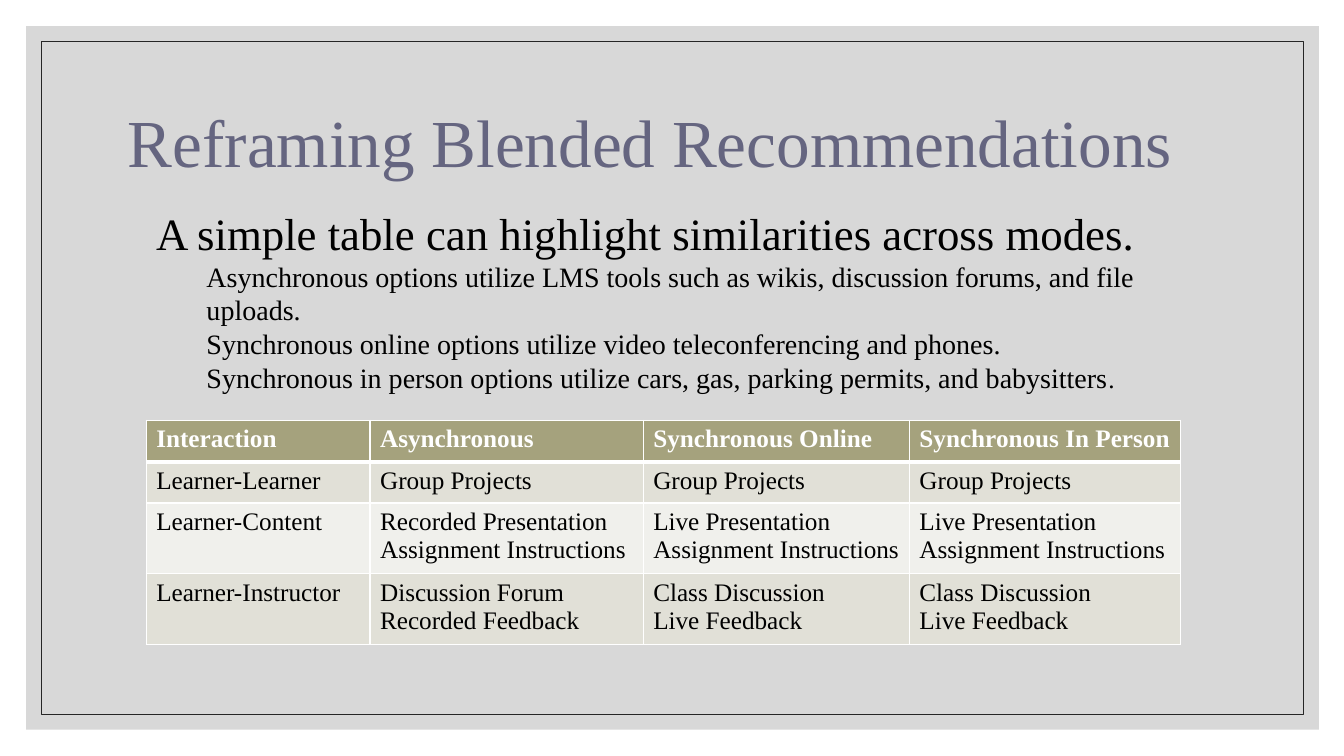
from lxml.etree import SubElement
from pptx import Presentation
from pptx.dml.color import RGBColor
from pptx.enum.shapes import MSO_SHAPE
from pptx.enum.text import MSO_ANCHOR
from pptx.oxml.ns import qn
from pptx.util import Inches, Pt

FONT = "Times New Roman"
COLORS = {
    "panel": "BFBFBF",
    "frame": "262626",
    "title": "656580",
    "text": "000000",
    "white": "FFFFFF",
    "header": "A5A27D",
    "odd_row": "E1E0D7",
    "even_row": "F0F0EC",
}
TITLE = "Reframing Blended Recommendations"
LEAD = "A simple table can highlight similarities across modes."
POINTS = [
    [("Asynchronous options utilize LMS tools such as wikis, "
      "discussion forums, and file uploads.", 20)],
    [("Synchronous online options utilize video teleconferencing and phones.", 20)],
    [("Synchronous in person options utilize cars, gas, parking permits, "
      "and babysitters", 20), (".", 18)],
]
ROWS = [
    ["Interaction", "Asynchronous", "Synchronous Online", "Synchronous In Person"],
    ["Learner-Learner"] + ["Group Projects"] * 3,
    ["Learner-Content", "Recorded Presentation\nAssignment Instructions"]
    + ["Live Presentation\nAssignment Instructions"] * 2,
    ["Learner-Instructor", "Discussion Forum\nRecorded Feedback"]
    + ["Class Discussion\nLive Feedback"] * 2,
]
COLUMN_WIDTHS = [2.22, 2.71, 2.64, 2.69]
ROW_HEIGHTS = [0.41, 0.41, 0.7, 0.7]


def color(name):
    """Return the named colour."""
    return RGBColor.from_string(COLORS[name])


def add_run(paragraph, text, size, color_name, bold=False):
    """Add formatted text to a paragraph."""
    run = paragraph.add_run()
    run.text = text
    for key, value in {"name": FONT, "size": Pt(size), "bold": bold}.items():
        setattr(run.font, key, value)
    run.font.color.rgb = color(color_name)


def add_text_frame(slide, box, anchor):
    """Add a wrapping text box and return its text frame."""
    frame = slide.shapes.add_textbox(*map(Inches, box)).text_frame
    for key, value in {"word_wrap": True, "vertical_anchor": anchor}.items():
        setattr(frame, key, value)
    return frame


def add_backdrop(slide, box, gap):
    """Draw a translucent panel and a thin frame set in from its edge."""
    left, top, width, height = box
    panel = slide.shapes.add_shape(MSO_SHAPE.RECTANGLE, *map(Inches, box))
    inner = (left + gap, top + gap, width - 2 * gap, height - 2 * gap)
    frame = slide.shapes.add_shape(MSO_SHAPE.RECTANGLE, *map(Inches, inner))
    for shape in (panel, frame):
        shape.shadow.inherit = False
    panel.fill.solid()
    panel.fill.fore_color.rgb = color("panel")
    fill_color = panel.fill._xPr.find(qn("a:solidFill"))[0]
    SubElement(fill_color, qn("a:alpha"), val="60000")
    panel.line.fill.background()
    frame.fill.background()
    frame.line.color.rgb = color("frame")
    frame.line.width = Pt(0.5)


def add_title(slide, box):
    """Place the slide title."""
    paragraph = add_text_frame(slide, box, MSO_ANCHOR.MIDDLE).paragraphs[0]
    paragraph.line_spacing = 0.9
    add_run(paragraph, TITLE, 48, "title")


def add_summary(slide, box):
    """Place the lead sentence and its indented points."""
    frame = add_text_frame(slide, box, MSO_ANCHOR.TOP)
    add_run(frame.paragraphs[0], LEAD, 32, "text")
    for point in POINTS:
        paragraph = frame.add_paragraph()
        paragraph.level = 1
        properties = paragraph._p.get_or_add_pPr()
        properties.set("marL", str(Inches(0.5)))
        properties.set("indent", "0")
        for text, size in point:
            add_run(paragraph, text, size, "text")


def add_borders(cell, widths):
    """Give a cell white borders with the given widths in points."""
    properties = cell._tc.get_or_add_tcPr()
    for side, width in widths.items():
        line = SubElement(properties, qn(f"a:ln{side}"), w=str(Pt(width)))
        fill = SubElement(line, qn("a:solidFill"))
        SubElement(fill, qn("a:srgbClr"), val=COLORS["white"])


def add_interaction_table(slide, box):
    """Place the table of interactions by mode."""
    graphic = slide.shapes.add_table(len(ROWS), len(ROWS[0]), *map(Inches, box))
    table = graphic.table
    for column, width in zip(table.columns, COLUMN_WIDTHS):
        column.width = Inches(width)
    for row_index, (row, height) in enumerate(zip(ROWS, ROW_HEIGHTS)):
        table.rows[row_index].height = Inches(height)
        is_header = row_index == 0
        fill_name = "header" if is_header else "odd_row" if row_index % 2 else "even_row"
        widths = {"L": 1, "R": 1, "T": 3 if row_index == 1 else 1, "B": 3 if is_header else 1}
        for column_index, text in enumerate(row):
            cell = table.cell(row_index, column_index)
            add_borders(cell, widths)
            cell.fill.solid()
            cell.fill.fore_color.rgb = color(fill_name)
            for line_index, line in enumerate(text.split("\n")):
                frame = cell.text_frame
                paragraph = frame.add_paragraph() if line_index else frame.paragraphs[0]
                add_run(paragraph, line, 18, "white" if is_header else "text", is_header)


def main():
    """Build and save the slide."""
    presentation = Presentation()
    presentation.slide_width = Inches(13.33)
    presentation.slide_height = Inches(7.5)
    slide = presentation.slides.add_slide(presentation.slide_layouts[6])
    add_backdrop(slide, (0.26, 0.26, 12.82, 6.98), 0.15)
    add_title(slide, (1.17, 0.7, 11, 1.5))
    add_summary(slide, (1.45, 1.99, 10.57, 1.95))
    add_interaction_table(slide, (1.45, 4.17, sum(COLUMN_WIDTHS), sum(ROW_HEIGHTS)))
    presentation.save("out.pptx")


if __name__ == "__main__":
    main()
